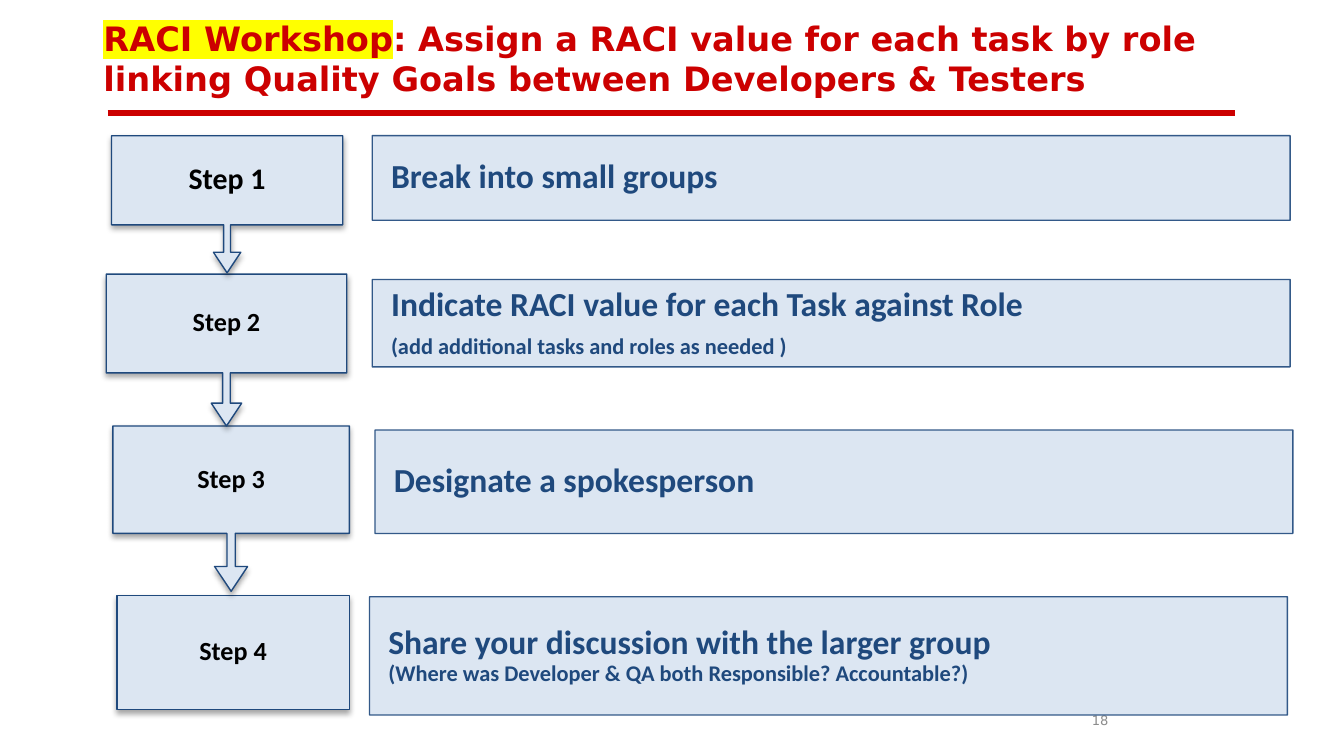
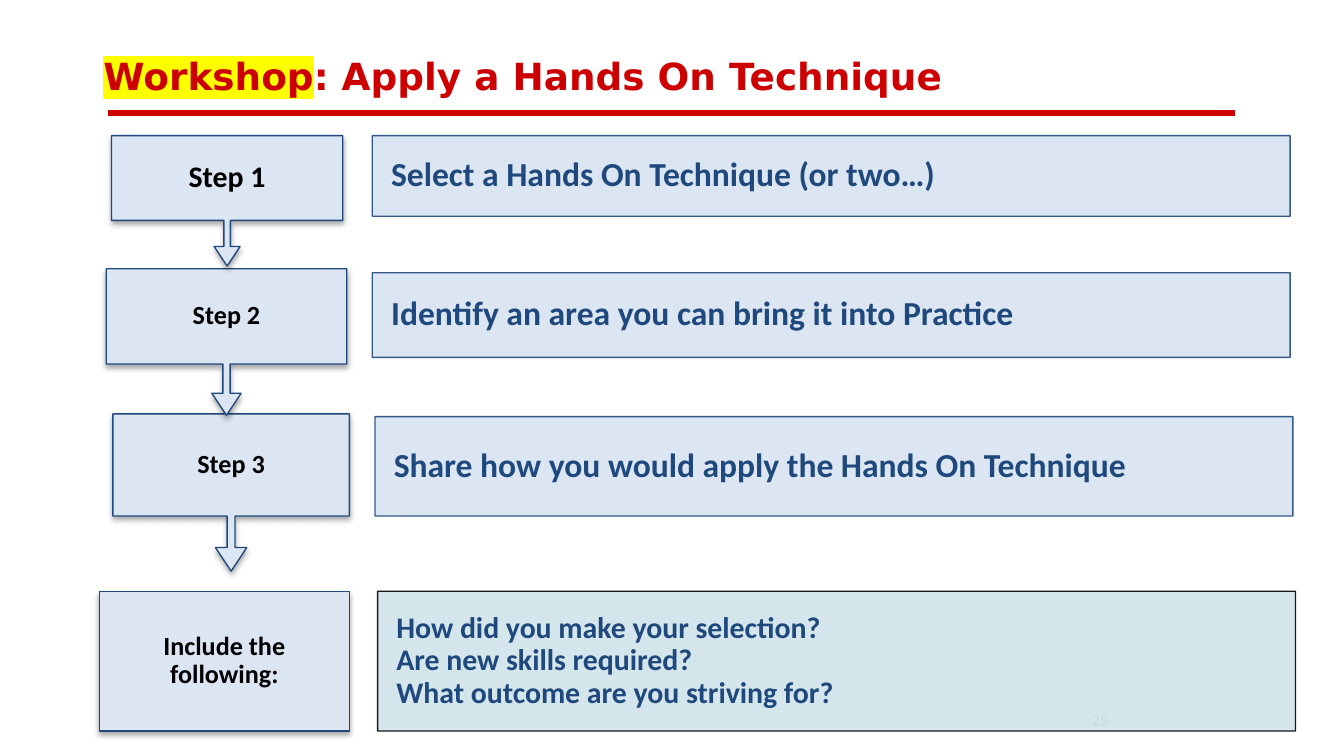
"""Build two workshop slides, each a chain of steps beside its goals."""
from lxml.etree import SubElement
from pptx import Presentation
from pptx.dml.color import RGBColor
from pptx.enum.shapes import MSO_CONNECTOR, MSO_SHAPE
from pptx.enum.text import MSO_ANCHOR, PP_ALIGN
from pptx.oxml.ns import qn
from pptx.util import Inches, Pt

COLUMNS, ROWS = 100, 56.25
RED, NAVY, PALE, TEAL, BLACK, GREY = "CC0000", "1F497D", "DCE6F2", "D0E3EA", "000000", "8C8C8C"
HEAD_FONT, BODY_FONT = "DejaVu Sans", "Calibri"
STEP_COLUMNS = [(8.3, 17.2, 27.7, 16), (7.9, 17.9, 27.7, 14), (8.4, 17.6, 27.9, 14)]
GOAL_WIDTH = 68.3

SLIDES = [
    dict(
        mark="RACI Workshop", number="18", size=18,
        rest=": Assign a RACI value for each task by role linking Quality Goals between Developers & Testers",
        steps=[
            (10.1, 10.2, 10.1, 6.3, [("Break into small groups", [18])]),
            (20.4, 11.3, 20.8, 6.5, [("Indicate RACI value for each Task against Role", [18]),
                                     ("(add additional tasks and roles as needed )", [12])]),
            (31.7, 12.3, 32, 7.7, [("Designate a spokesperson", [18])]),
        ],
        last=("Step 4", (8.7, 44.3, 17.3, 8.5), (27.5, 44.4, GOAL_WIDTH, 8.8), PALE, NAVY,
              [("Share your discussion with the larger group\n"
                "(Where was Developer & QA both Responsible? Accountable?)", [18, 12])]),
    ),
    dict(
        mark="Workshop", number="25", size=20, rest=": Apply a Hands On Technique",
        steps=[
            (10.1, 9.7, 10.1, 6, [("Select a Hands On Technique (or two…)", [18])]),
            (20, 10.9, 20.3, 6.3, [("Identify an area you can bring it into Practice", [18])]),
            (30.8, 11.7, 31, 7.4, [("Share how you would apply the Hands On Technique", [18])]),
        ],
        last=("Include the following:", (7.4, 44, 18.6, 10.4), (28.1, 44, GOAL_WIDTH, 10.4), TEAL, BLACK,
              [("How did you make your selection?\nAre new skills required?\n"
                "What outcome are you striving for?", [16, 16, 16])]),
    ),
]


def color(value):
    """Turn a hex string into a colour."""
    return RGBColor.from_string(value)


class Deck:
    """Hold the presentation, its grid and the current slide."""

    def __init__(self):
        """Start an empty deck."""
        self.prs = Presentation()
        self.prs.slide_width, self.prs.slide_height = Inches(10), Inches(5.625)
        self.s = None

    def box(self, left, top, width, height):
        """Convert grid columns and rows to lengths."""
        col, row = self.prs.slide_width / COLUMNS, self.prs.slide_height / ROWS
        return [round(n) for n in (left * col, top * row, width * col, height * row)]

    def new_slide(self):
        """Add a blank slide and make it current."""
        self.s = self.prs.slides.add_slide(self.prs.slide_layouts[6])

    def style(self, runs, sizes, font, hue, bold=True):
        """Format runs in turn."""
        for r, size in zip(runs, sizes):
            r.font.size, r.font.name, r.font.bold = Pt(size), font, bold
            r.font.color.rgb = color(hue)

    def frame(self, sp, anchor, side=0, end=0):
        """Prepare the text frame of a shape."""
        tf = sp.text_frame
        tf.word_wrap, tf.vertical_anchor = True, anchor
        tf.margin_left = tf.margin_right = Inches(side)
        tf.margin_top = tf.margin_bottom = Inches(end)
        return tf

    def title(self, mark, rest, size):
        """Add the heading with its marked words and rule."""
        sp = self.s.shapes.add_textbox(*self.box(7.7, 3, 86.2, 4.3))
        p = self.frame(sp, MSO_ANCHOR.BOTTOM).paragraphs[0]
        p.text = mark
        p.add_run().text = rest
        self.style(p.runs, [size, size], HEAD_FONT, RED)
        fill = p.runs[0].font._element.find(qn("a:solidFill"))
        highlight = fill.getparent().makeelement(qn("a:highlight"))
        SubElement(highlight, qn("a:srgbClr"), val="FFFF00")
        fill.addnext(highlight)
        x, y, width, _ = self.box(8, 8.4, 83.9, 0)
        rule = self.s.shapes.add_connector(MSO_CONNECTOR.STRAIGHT, x, y, x + width, y)
        rule.line.color.rgb, rule.line.width = color(RED), Pt(3)
        SubElement(rule._element.spPr, qn("a:effectLst"))

    def number(self, text):
        """Add the slide number."""
        sp = self.s.shapes.add_textbox(*self.box(70.6, 52.1, 22.5, 3))
        p = self.frame(sp, MSO_ANCHOR.MIDDLE).paragraphs[0]
        p.text, p.alignment, p.space_after = text, PP_ALIGN.CENTER, Pt(6)
        self.style(p.runs, [7], HEAD_FONT, GREY, False)

    def panel(self, kind, place, fill=PALE, line=NAVY):
        """Add a filled and outlined shape."""
        sp = self.s.shapes.add_shape(kind, *self.box(*place))
        sp.shadow.inherit = False
        sp.fill.solid()
        sp.fill.fore_color.rgb = color(fill)
        sp.line.color.rgb, sp.line.width = color(line), Pt(0.75)
        return sp

    def fade(self, fill):
        """Make a solid fill slightly transparent."""
        SubElement(fill.find(qn("a:srgbClr")), qn("a:alpha"), val="90000")

    def paragraphs(self, tf, items, align, hue):
        """Fill a text frame with tight bold paragraphs."""
        for i, (text, sizes) in enumerate(items):
            p = tf.add_paragraph() if i else tf.paragraphs[0]
            p.text, p.alignment, p.line_spacing = text, align, 0.9
            p.space_after = Pt(round(sizes[0] * 0.35, 1))
            self.style(p.runs, sizes, BODY_FONT, hue)
            for br in p._p.findall(qn("a:br")):
                SubElement(br, qn("a:rPr"), sz=str(sizes[0] * 100))

    def step(self, label, place, size=14, arrow=True):
        """Add a shadowed step, with an arrow to the next one if wanted."""
        kind = MSO_SHAPE.DOWN_ARROW_CALLOUT if arrow else MSO_SHAPE.RECTANGLE
        sp = self.panel(kind, place)
        if arrow:
            for i, value in enumerate((0.05, 0.1, 0.15, 0.65)):
                sp.adjustments[i] = value
        effects = sp._element.spPr.find(qn("a:effectLst"))
        shadow = SubElement(effects, qn("a:outerShdw"), blurRad=str(Pt(3.1)), dist=str(Pt(1.8)),
                            dir="5400000", rotWithShape="0")
        SubElement(SubElement(shadow, qn("a:srgbClr"), val=BLACK), qn("a:alpha"), val="35000")
        tf = self.frame(sp, MSO_ANCHOR.MIDDLE, 0.16, 0.11)
        self.paragraphs(tf, [(label, [size])], PP_ALIGN.CENTER, BLACK)

    def goal(self, items, place, fill=PALE, line=NAVY):
        """Add the wide panel that explains a step."""
        sp = self.panel(MSO_SHAPE.RECTANGLE, place, fill, line)
        spPr = sp._element.spPr
        self.fade(spPr.find(qn("a:ln")).find(qn("a:solidFill")))
        if fill == TEAL:
            self.fade(spPr.find(qn("a:solidFill")))
        tf = self.frame(sp, MSO_ANCHOR.MIDDLE, 0.14, 0.05)
        self.paragraphs(tf, items, PP_ALIGN.LEFT, NAVY)


def main():
    """Build and save the deck."""
    deck = Deck()
    for data in SLIDES:
        deck.new_slide()
        deck.title(data["mark"], data["rest"], data["size"])
        deck.number(data["number"])
        label, step_place, goal_place, fill, line, text = data["last"]
        deck.step(label, step_place, arrow=False)
        deck.goal(text, goal_place, fill, line)
        rows = list(enumerate(zip(STEP_COLUMNS, data["steps"]), 1))
        for n, ((left, width, goal_left, size), (top, height, goal_top, goal_height, goal)) in reversed(rows):
            deck.step(f"Step {n}", (left, top, width, height), size)
            deck.goal(goal, (goal_left, goal_top, GOAL_WIDTH, goal_height))
    deck.prs.save("out.pptx")


if __name__ == "__main__":
    main()
